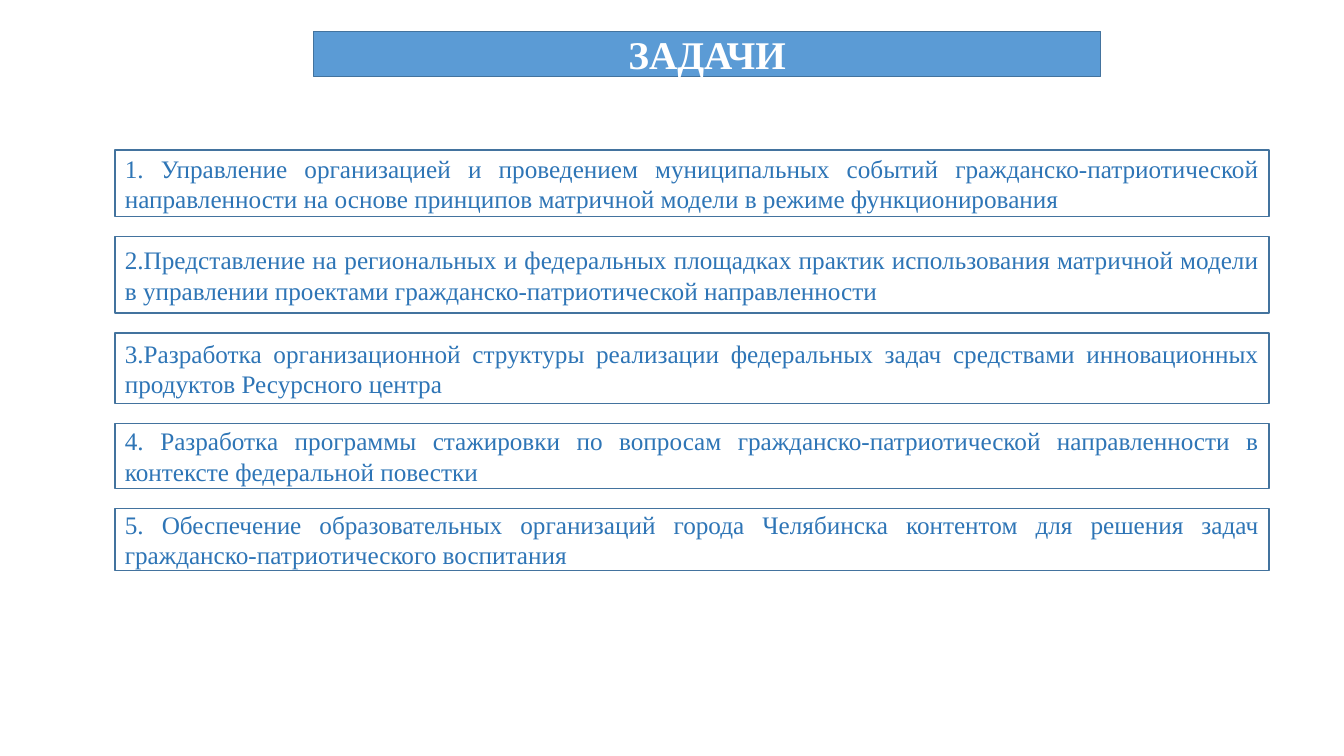
from pptx import Presentation
from pptx import util as u
from pptx.dml.color import RGBColor
from pptx.enum import shapes, text

BLUE = RGBColor(0x5B, 0x9B, 0xD5)
EDGE = RGBColor(0x43, 0x73, 0x9E)
INK = RGBColor(0x2E, 0x75, 0xB6)
WHITE = RGBColor(0xFF, 0xFF, 0xFF)

LEFT, WIDTH, GAP = 82.1, 824.4, 14.2
TASKS = [
    ("1. Управление организацией и проведением муниципальных событий "
     "гражданско-патриотической направленности на основе принципов "
     "матричной модели в режиме функционирования", 47.5),
    ("2.Представление на региональных и федеральных площадках практик "
     "использования матричной модели в управлении проектами "
     "гражданско-патриотической направленности", 54.7),
    ("3.Разработка организационной структуры реализации федеральных задач "
     "средствами инновационных продуктов Ресурсного центра", 50.4),
    ("4. Разработка программы стажировки по вопросам "
     "гражданско-патриотической направленности в контексте "
     "федеральной повестки", 46.4),
    ("5. Обеспечение образовательных организаций города Челябинска "
     "контентом для решения задач гражданско-патриотического "
     "воспитания", 44.6),
]


def write(box, words, size=18, color=INK, fill=WHITE, bold=False,
          align=text.PP_ALIGN.JUSTIFY):
    box.fill.solid()
    box.fill.fore_color.rgb = fill
    box.line.color.rgb = EDGE
    box.line.width = u.Pt(1)
    frame = box.text_frame
    frame.word_wrap = True
    frame.auto_size = text.MSO_AUTO_SIZE.NONE
    frame.vertical_anchor = text.MSO_ANCHOR.MIDDLE
    par = frame.paragraphs[0]
    par.alignment = align
    run = par.add_run()
    run.text = words
    run.font.name = "Times New Roman"
    run.font.size = u.Pt(size)
    run.font.bold = bold
    run.font.color.rgb = color


deck = Presentation()
deck.slide_width, deck.slide_height = u.Pt(960), u.Pt(540)
slide = deck.slides.add_slide(deck.slide_layouts[5])

title = slide.shapes.title
title.left, title.top = u.Pt(223.9), u.Pt(22.3)
title.width, title.height = u.Pt(562.3), u.Pt(32.4)
write(title, "ЗАДАЧИ", size=28, color=WHITE, fill=BLUE, bold=True,
      align=text.PP_ALIGN.CENTER)

top = 107.3
for task, height in TASKS:
    box = slide.shapes.add_shape(shapes.MSO_SHAPE.RECTANGLE, u.Pt(LEFT),
                                 u.Pt(top), u.Pt(WIDTH), u.Pt(height))
    box.shadow.inherit = False
    write(box, task)
    top += height + GAP

deck.save("out.pptx")
